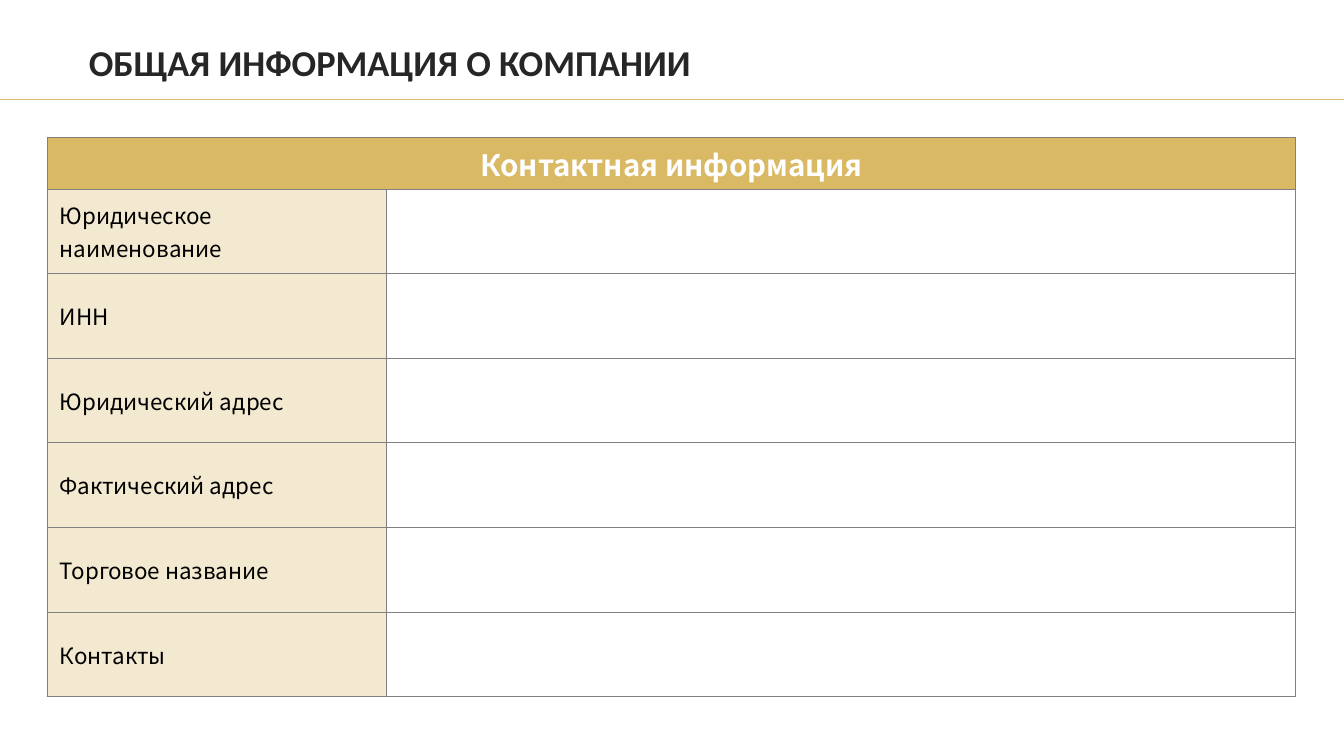
from dataclasses import dataclass
from typing import Optional

from lxml.etree import SubElement
from pptx import Presentation
from pptx.dml.color import RGBColor
from pptx.enum.shapes import MSO_CONNECTOR
from pptx.enum.text import MSO_ANCHOR, PP_ALIGN
from pptx.oxml import parse_xml
from pptx.oxml.ns import nsdecls, qn
from pptx.util import Emu, Pt

EMU_PER_PX = 914400 / 100.8
SLIDE_W, SLIDE_H = 1344, 756
GOLD = RGBColor(0xDA, 0xB9, 0x65)
DARK = RGBColor(0x26, 0x26, 0x26)
GREY = RGBColor(0x80, 0x80, 0x80)
BLACK = RGBColor(0, 0, 0)
WHITE = RGBColor(255, 255, 255)
TITLE_FONT = "Calibri"
TABLE_FONT = "Noto Sans CJK SC"

TABLE_X, TABLE_Y = 47, 137
LABEL_W, VALUE_W = 339, 910
HEADER_H, BODY_H = 52, 508
LABELS = (
    "Юридическое наименование",
    "ИНН",
    "Юридический адрес",
    "Фактический адрес",
    "Торговое название",
    "Контакты",
)


@dataclass(frozen=True)
class CellStyle:
    fill: Optional[RGBColor] = None
    opacity: int = 100
    color: RGBColor = BLACK
    size: int = 16
    bold: bool = False
    align: PP_ALIGN = PP_ALIGN.LEFT


HEADER = CellStyle(GOLD, color=WHITE, size=21, bold=True, align=PP_ALIGN.CENTER)
LABEL = CellStyle(GOLD, opacity=30)
VALUE = CellStyle()


def px(n: int) -> Emu:
    return Emu(round(n * EMU_PER_PX))


def write(tf, text: str, *, font: str, size: int, color: RGBColor, bold: bool = False,
          align: PP_ALIGN = PP_ALIGN.LEFT, spacing: float = 1.0) -> None:
    p = tf.paragraphs[0]
    p.alignment = align
    p.line_spacing = spacing
    r = p.add_run()
    r.text = text
    r.font.name = font
    r.font.size = Pt(size)
    r.font.bold = bold
    r.font.color.rgb = color


def add_borders(cell) -> None:
    tc_pr = cell._tc.get_or_add_tcPr()
    for i, side in enumerate(("lnL", "lnR", "lnT", "lnB")):
        tc_pr.insert(i, parse_xml(
            f'<a:{side} {nsdecls("a")} w="{Pt(0.75)}"><a:solidFill>'
            f'<a:srgbClr val="{GREY}"/></a:solidFill></a:{side}>'))


def style_cell(cell, style: CellStyle, text: str = "") -> None:
    cell.vertical_anchor = MSO_ANCHOR.MIDDLE
    cell.margin_left = cell.margin_right = px(13)
    cell.margin_top = cell.margin_bottom = px(5)
    if style.fill is None:
        cell.fill.background()
    else:
        cell.fill.solid()
        cell.fill.fore_color.rgb = style.fill
        if style.opacity < 100:
            clr = cell._tc.tcPr.find(".//" + qn("a:srgbClr"))
            SubElement(clr, qn("a:alpha")).set("val", str(style.opacity * 1000))
    add_borders(cell)
    if text:
        write(cell.text_frame, text, font=TABLE_FONT, size=style.size,
              color=style.color, bold=style.bold, align=style.align)


def add_title(slide, text: str) -> None:
    line = slide.shapes.add_connector(MSO_CONNECTOR.STRAIGHT, 0, px(99), px(SLIDE_W), px(99))
    line.line.color.rgb = GOLD
    line.line.width = Pt(0.5)
    SubElement(line._element.spPr, qn("a:effectLst"))

    tf = slide.shapes.add_textbox(px(79), px(31), px(1228), px(67)).text_frame
    tf.word_wrap = True
    tf.vertical_anchor = MSO_ANCHOR.MIDDLE
    write(tf, text, font=TITLE_FONT, size=26, color=DARK, bold=True, spacing=0.9)


def add_contact_table(slide) -> None:
    table = slide.shapes.add_table(
        len(LABELS) + 1, 2, px(TABLE_X), px(TABLE_Y),
        px(LABEL_W + VALUE_W), px(HEADER_H + BODY_H)).table
    table.first_row = table.horz_banding = False
    table.columns[0].width = px(LABEL_W)
    table.columns[1].width = px(VALUE_W)

    table.rows[0].height = px(HEADER_H)
    table.cell(0, 0).merge(table.cell(0, 1))
    style_cell(table.cell(0, 0), HEADER, "Контактная информация")
    style_cell(table.cell(0, 1), HEADER)
    for i, label in enumerate(LABELS, start=1):
        table.rows[i].height = Emu(px(BODY_H) // len(LABELS))
        style_cell(table.cell(i, 0), LABEL, label)
        style_cell(table.cell(i, 1), VALUE)


def main() -> None:
    prs = Presentation()
    prs.slide_width, prs.slide_height = px(SLIDE_W), px(SLIDE_H)
    slide = prs.slides.add_slide(prs.slide_layouts[6])
    add_title(slide, "ОБЩАЯ ИНФОРМАЦИЯ О КОМПАНИИ")
    add_contact_table(slide)
    prs.save("out.pptx")


if __name__ == "__main__":
    main()
